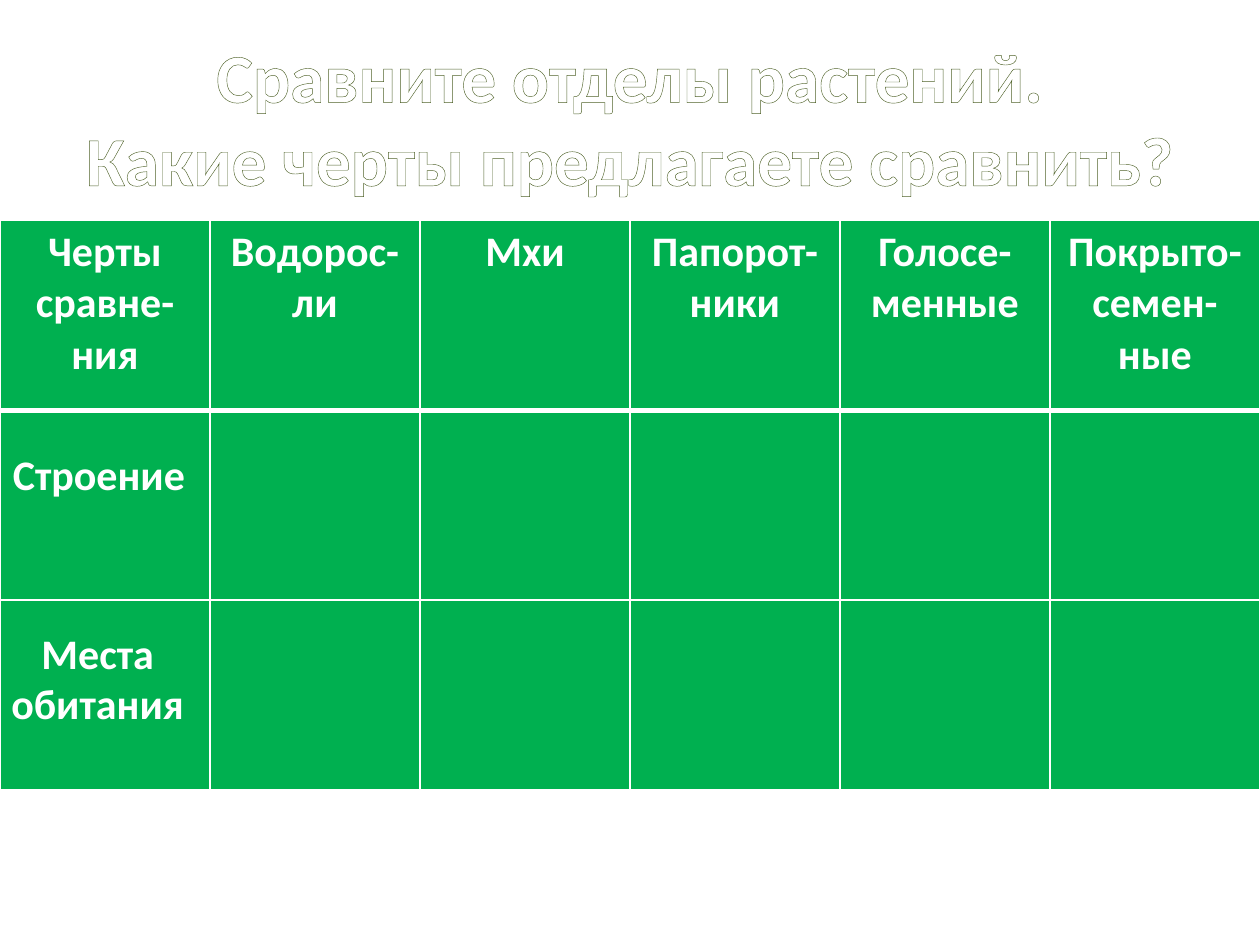
from lxml.etree import SubElement
from pptx import Presentation
from pptx.dml.color import RGBColor
from pptx.enum.text import MSO_ANCHOR as Anchor, MSO_AUTO_SIZE as AutoSize, PP_ALIGN as Align
from pptx.oxml.ns import qn
from pptx.util import Inches, Pt

COLORS = {"text": "FFFFFF", "cell": "00B050", "border": "FFFFFF", "outline": "4F6228"}
GRID_COLUMNS, GRID_ROWS = 100, 75
TITLE_LAYOUT = 5

TITLE = "Сравните отделы растений.\vКакие черты предлагаете сравнить?"
HEADERS = ["Черты сравне-ния", "Водорос-ли", "Мхи", "Папорот-ники",
           "Голосе-менные", "Покрыто-семен-ные"]
FEATURES = [
    (["Строение"], (-0.1, 35.1, 15.9, 5)),
    (["Места", "обитания"], (-0.2, 49.3, 15.9, 9.1)),
]


class ComparisonSlide:
    """Holds the style and the current slide; boxes are (left, top, width, height) in grid units."""

    def __init__(self, presentation):
        self.font = {"name": "Calibri", "bold": True}
        self.title_size, self.text_size = Pt(39.6), Pt(24)
        self.column = presentation.slide_width / GRID_COLUMNS
        self.row = presentation.slide_height / GRID_ROWS
        self.slide = presentation.slides.add_slide(presentation.slide_layouts[TITLE_LAYOUT])

    def place(self, box):
        left, top, width, height = box
        return [round(length) for length in (left * self.column, top * self.row,
                                             width * self.column, height * self.row)]

    def set_text(self, frame, lines, size):
        frame.text = "\n".join(lines)
        for paragraph in frame.paragraphs:
            paragraph.alignment = Align.CENTER
            for run in paragraph.runs:
                for name, value in {**self.font, "size": size}.items():
                    setattr(run.font, name, value)
                run.font.color.rgb = RGBColor.from_string(COLORS["text"])

    def line(self, parent, tag, width, color, index):
        line = SubElement(parent, qn(tag), w=str(Pt(width)))
        fill = SubElement(line, qn("a:solidFill"))
        SubElement(fill, qn("a:srgbClr"), val=COLORS[color])
        parent.insert(index, line)

    def title(self, text, box):
        shape = self.slide.shapes.title
        shape.left, shape.top, shape.width, shape.height = self.place(box)
        frame = shape.text_frame
        self.set_text(frame, [text], self.title_size)
        for name, value in {"vertical_anchor": Anchor.MIDDLE, "word_wrap": True,
                            "auto_size": AutoSize.NONE}.items():
            setattr(frame, name, value)
        for run in frame.paragraphs[0].runs:
            self.line(run.font._element, "a:ln", 1.45, "outline", 0)

    def table(self, headers, row_count, box):
        table = self.slide.shapes.add_table(row_count, len(headers), *self.place(box)).table
        for row_index, row in enumerate(table.rows):
            top = 3 if row_index == 1 else 1
            bottom = 3 if row_index == 0 else 1
            for column_index, cell in enumerate(row.cells):
                cell.fill.solid()
                cell.fill.fore_color.rgb = RGBColor.from_string(COLORS["cell"])
                if row_index == 0:
                    self.set_text(cell.text_frame, [headers[column_index]], self.text_size)
                properties = cell._tc.get_or_add_tcPr()
                for index, (side, width) in enumerate(zip("LRTB", (1, 1, top, bottom))):
                    self.line(properties, f"a:ln{side}", width, "border", index)

    def label(self, lines, box):
        frame = self.slide.shapes.add_textbox(*self.place(box)).text_frame
        frame.word_wrap = False
        frame.auto_size = AutoSize.SHAPE_TO_FIT_TEXT
        self.set_text(frame, lines, self.text_size)


def main():
    presentation = Presentation()
    presentation.slide_width, presentation.slide_height = Inches(10), Inches(7.5)
    slide = ComparisonSlide(presentation)
    slide.title(TITLE, (5, 3, 90, 12.5))
    slide.table(HEADERS, 1 + len(FEATURES), (0, 17.5, 100, 45.2))
    for lines, box in FEATURES:
        slide.label(lines, box)
    presentation.save("out.pptx")


if __name__ == "__main__":
    main()
